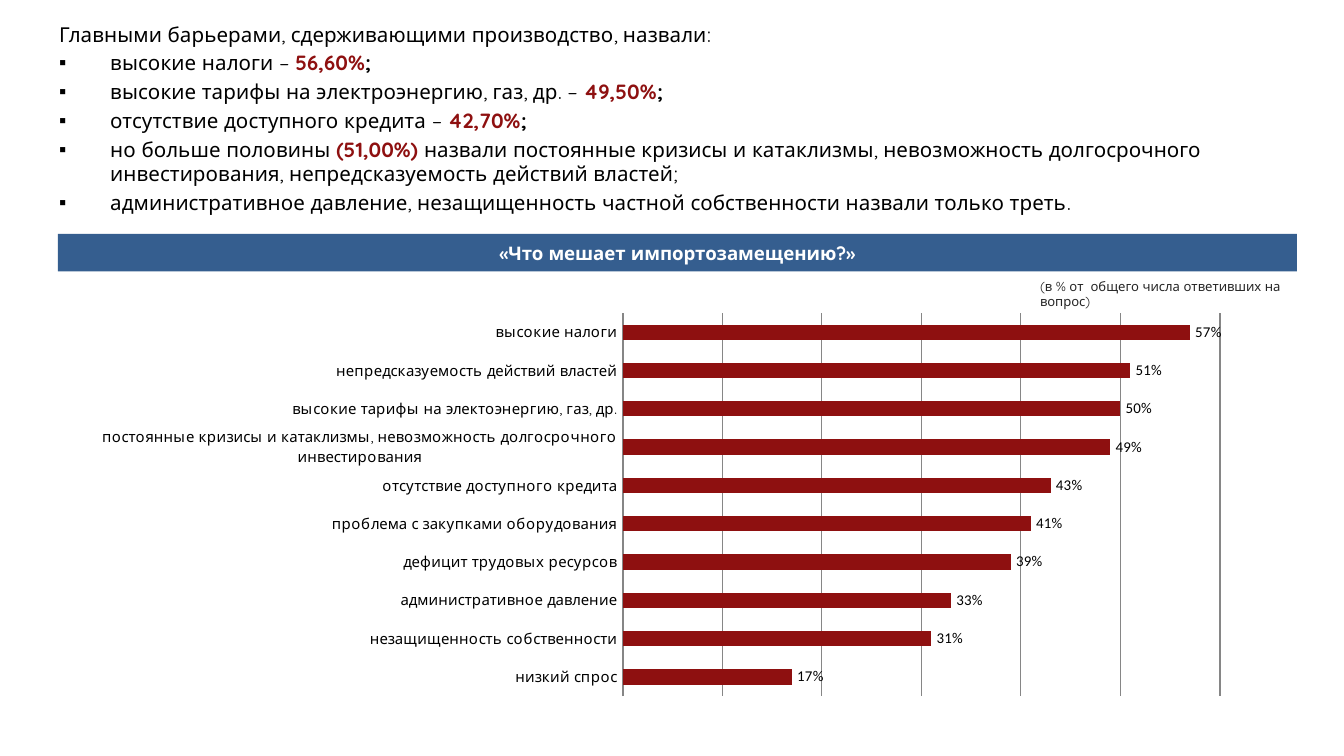
from lxml import etree
from pptx import Presentation
from pptx.chart.data import CategoryChartData
from pptx.dml.color import RGBColor
from pptx.enum.chart import XL_CHART_TYPE, XL_LABEL_POSITION, XL_TICK_MARK
from pptx.enum.text import MSO_ANCHOR, MSO_AUTO_SIZE, PP_ALIGN
from pptx.oxml.ns import qn
from pptx.util import Inches, Pt

BAR = XL_CHART_TYPE.BAR_CLUSTERED
OUTSIDE_END = XL_LABEL_POSITION.OUTSIDE_END
NO_TICK = XL_TICK_MARK.NONE
MIDDLE = MSO_ANCHOR.MIDDLE
NO_FIT = MSO_AUTO_SIZE.NONE
CENTER, LEFT = PP_ALIGN.CENTER, PP_ALIGN.LEFT

COLORS = {"text": "000000", "accent": "8E1010", "banner": "355E8F",
          "white": "FFFFFF", "note": "262626", "grid": "868686"}
TEXT_FONT, CHART_FONT = "Quicksand", "Calibri"

INTRO = "Главными барьерами, сдерживающими производство, назвали:"
BARRIERS = [
    ("высокие налоги – ", "56,60%", ";", True),
    ("высокие тарифы на электроэнергию, газ, др. – ", "49,50%", ";", True),
    ("отсутствие доступного кредита – ", "42,70%", ";", True),
    ("но больше половины ", "(51,00%) ",
     "назвали постоянные кризисы и катаклизмы, невозможность долгосрочного "
     "инвестирования, непредсказуемость действий властей;", False),
    ("административное давление, незащищенность частной собственности "
     "назвали только треть.", "", "", False),
]
ANSWERS = [
    ("низкий спрос", 0.17),
    ("незащищенность собственности", 0.31),
    ("административное давление", 0.33),
    ("дефицит трудовых ресурсов", 0.39),
    ("проблема с закупками оборудования", 0.41),
    ("отсутствие доступного кредита", 0.43),
    ("постоянные кризисы и катаклизмы, невозможность долгосрочного инвестирования", 0.49),
    ("высокие тарифы на электоэнергию, газ, др.", 0.5),
    ("непредсказуемость действий властей", 0.51),
    ("высокие налоги", 0.57),
]


def rgb(name):
    """Return a palette colour."""
    return RGBColor.from_string(COLORS[name])


def style_font(font, size, color, name=TEXT_FONT, bold=False):
    """Set the look of a font."""
    font.name, font.size, font.bold = name, Pt(size), bold
    font.color.rgb = rgb(color)


def add_span(para, text, size, color, bold=False):
    """Add one formatted run."""
    span = para.add_run()
    span.text = text
    style_font(span.font, size, color, bold=bold)


def place(shape, box):
    """Move a shape to a box given in inches."""
    shape.left, shape.top, shape.width, shape.height = map(Inches, box)


def set_bullet(para, char=None, indent=0):
    """Give a paragraph a hanging bullet, or none."""
    props = para._p.get_or_add_pPr()
    props.set("marL", str(Inches(indent)))
    props.set("indent", str(-Inches(indent)))
    if char:
        etree.SubElement(props, qn("a:buChar")).set("char", char)
    else:
        etree.SubElement(props, qn("a:buNone"))


def fill_barriers(body, box):
    """Write the list of barriers into the body placeholder."""
    place(body, box)
    frame = body.text_frame
    frame.auto_size, frame.vertical_anchor = NO_FIT, MIDDLE
    para = frame.paragraphs[0]
    set_bullet(para)
    add_span(para, INTRO, 11, "text")
    for lead, share, tail, bold_tail in BARRIERS:
        para = frame.add_paragraph()
        set_bullet(para, "▪", 0.38)
        add_span(para, lead, 11, "text")
        if share:
            add_span(para, share, 11, "accent", True)
            add_span(para, tail, 11, "text", bold_tail)


def fill_banner(title, box):
    """Turn the title placeholder into the banner over the chart."""
    place(title, box)
    title.fill.solid()
    title.fill.fore_color.rgb = rgb("banner")
    frame = title.text_frame
    frame.auto_size, frame.vertical_anchor = NO_FIT, MIDDLE
    para = frame.paragraphs[0]
    para.alignment = CENTER
    add_span(para, "«Что мешает импортозамещению?»", 10, "white", True)


def add_note(page, box):
    """Add the note on the unit of measure."""
    frame = page.shapes.add_textbox(*map(Inches, box)).text_frame
    frame.word_wrap = True
    para = frame.paragraphs[0]
    para.alignment = LEFT
    add_span(para, "(в % от  общего числа ответивших на вопрос)", 7, "note")


def set_plot_area(chart, x, y, w, h):
    """Fix the inner plot area as fractions of the chart."""
    area = chart._chartSpace.chart.plotArea
    for old in area.findall(qn("c:layout")):
        area.remove(old)
    layout = etree.Element(qn("c:layout"))
    area.insert(0, layout)
    manual = etree.SubElement(layout, qn("c:manualLayout"))
    for tag, value in (("layoutTarget", "inner"), ("xMode", "edge"), ("yMode", "edge"),
                       ("x", x), ("y", y), ("w", w), ("h", h)):
        etree.SubElement(manual, qn("c:" + tag)).set("val", str(value))


def add_answers_chart(page, box):
    """Add the bar chart of answers."""
    data = CategoryChartData(number_format="0%")
    data.categories = [name for name, _ in ANSWERS]
    data.add_series("Series 1", [share for _, share in ANSWERS])
    chart = page.shapes.add_chart(BAR, *map(Inches, box), data).chart
    chart.has_legend = chart.has_title = False
    style_font(chart.font, 10, "text", CHART_FONT)
    set_plot_area(chart, 0.467, 0.02, 0.513, 0.96)

    names = chart.category_axis
    names.major_tick_mark = names.minor_tick_mark = NO_TICK
    names.format.line.color.rgb = rgb("grid")
    style_font(names.tick_labels.font, 8, "text")

    shares = chart.value_axis
    shares.minimum_scale, shares.maximum_scale, shares.major_unit = 0, 0.6, 0.1
    shares.has_major_gridlines = True
    shares.major_gridlines.format.line.color.rgb = rgb("grid")
    shares.visible = False

    plot = chart.plots[0]
    plot.gap_width, plot.vary_by_categories = 150, False
    bars = plot.series[0].format
    bars.fill.solid()
    bars.fill.fore_color.rgb = rgb("accent")
    plot.has_data_labels = True
    labels = plot.data_labels
    labels.show_value, labels.position = True, OUTSIDE_END
    labels.number_format, labels.number_format_is_linked = "0%", False
    style_font(labels.font, 8, "text", CHART_FONT)


def main():
    """Build the deck."""
    deck = Presentation()
    deck.slide_width = Inches(10)
    deck.slide_height = deck.slide_width * 9 // 16
    page = deck.slides.add_slide(deck.slide_layouts[1])
    fill_barriers(page.placeholders[1], (0.34, 0.13, 9.31, 1.5))
    add_note(page, (7.64, 2.02, 2.36, 0.34))
    add_answers_chart(page, (0.59, 2.27, 8.66, 2.97))
    fill_banner(page.shapes.title, (0.43, 1.74, 9.22, 0.28))
    deck.save("out.pptx")


if __name__ == "__main__":
    main()
